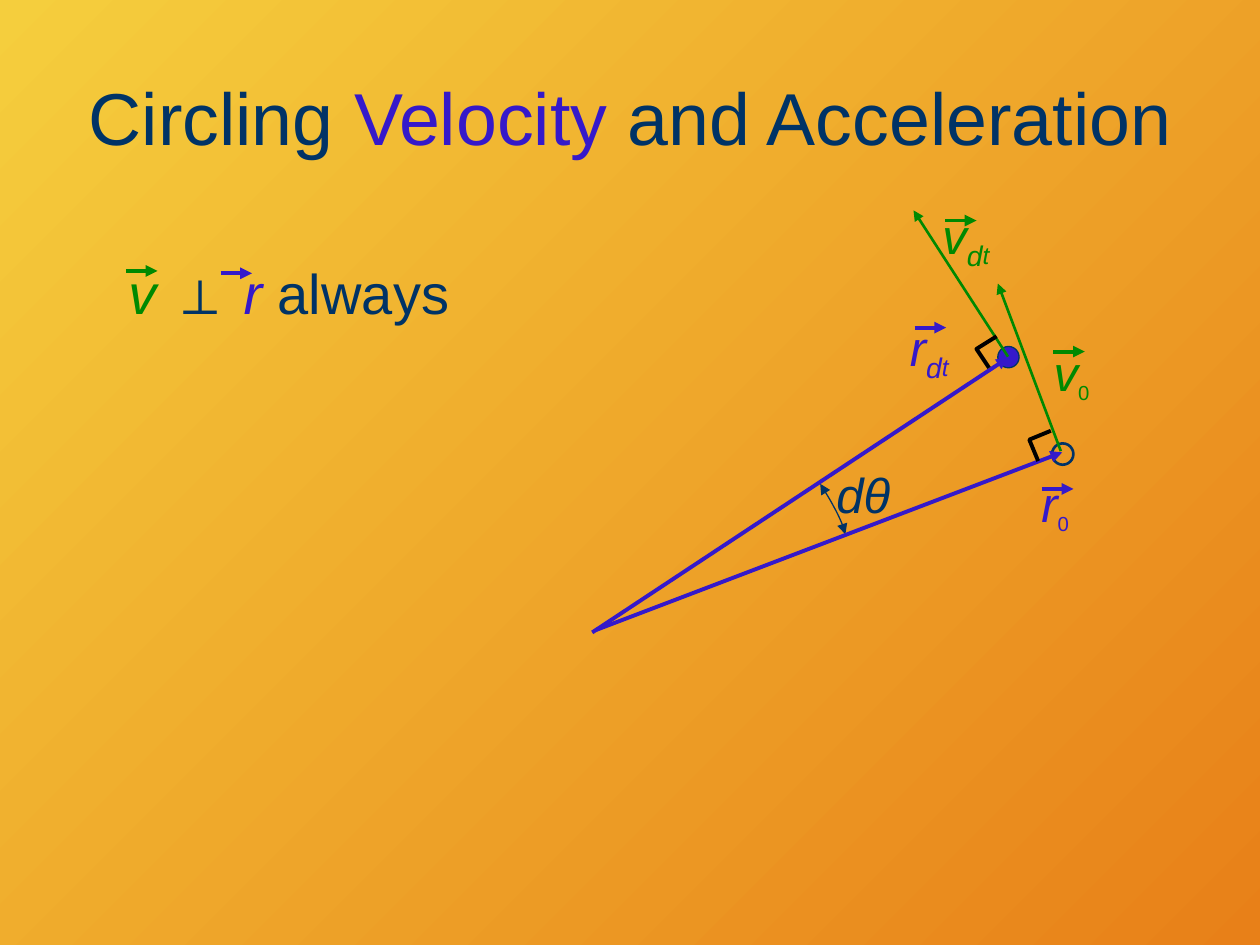
from lxml.etree import SubElement
from pptx import Presentation
from pptx.dml.color import RGBColor
from pptx.enum.shapes import MSO_CONNECTOR as CONN, MSO_SHAPE as SHAPE
from pptx.enum.text import MSO_ANCHOR as ANCHOR, MSO_AUTO_SIZE as AUTO, PP_ALIGN as ALIGN
from pptx.oxml.ns import qn
from pptx.util import Pt

NAVY, BLUE, GREEN, BLACK = "003366", "3519CA", "008901", "000000"
GRADIENT = ["F5CE3D", "E88018"]

# Runs: text, colour, size, italic, subscript
TITLE = [("Circling ", NAVY, 42, False, False), ("Velocity", BLUE, 42, False, False),
         (" and Acceleration", NAVY, 42, False, False)]
BODY = [("v ", GREEN, 32, True, False), ("⊥ ", NAVY, 32, False, False),
        ("r", BLUE, 32, True, False), (" always", NAVY, 32, False, False)]
ANGLE = [("dθ", NAVY, 28, True, False)]

# Vector labels: letter, subscript, colour, left, top
LABELS = [("r", "0", BLUE, 578.9, 267.1), ("r", "dt", BLUE, 506.9, 177.8),
          ("v", "dt", GREEN, 527.8, 113.8), ("v", "0", GREEN, 588.2, 192.2)]
LABEL_SIZE = (48.2, 41)

# Short bars over the vector letters: colour, left, y
BARS = [(BLUE, 595.4, 279.4), (BLUE, 522.7, 187.2), (GREEN, 540, 126),
        (GREEN, 601.9, 200.9), (BLUE, 126, 156.2), (GREEN, 72, 154.8)]
BAR_LENGTH = 18

# Vectors: colour, line width, start, end
VECTORS = [(BLUE, 2.25, (340.6, 360), (607, 258.5)), (BLUE, 2.25, (338.4, 361.4), (576, 204.5)),
           (GREEN, 1.5, (576, 203.8), (522, 120.2)), (GREEN, 1.5, (606.2, 257.8), (570.2, 162))]

# Particles: left, top, fill, line width
PARTICLES = [(601.2, 253.4, None, 1.5), (570.2, 198, BLUE, 0.75)]
DIAMETER = 12.2

RIGHT_ANGLES = [[(565.2, 210.2), (558, 199.4), (569.5, 192.2)],
                [(593.3, 263.5), (588.2, 251.3), (600.5, 246.2)]]
ARC = [(483.1, 305.3), (481, 295.9), (472.3, 282.2), (468.7, 276.5)]
ARC_STEPS = 16


def rgb(color):
    return RGBColor.from_string(color)


def write(tf, runs, align):
    tf.word_wrap = True
    p = tf.paragraphs[0]
    p.alignment = align
    for text, color, size, italic, sub in runs:
        r = p.add_run()
        r.text = text
        r.font.name, r.font.size, r.font.italic = "Arial", Pt(size), italic
        r.font.color.rgb = rgb(color)
        if sub:
            r.font._element.set("baseline", "-25000")
    return p


def place(sp, left, top, width, height):
    sp.left, sp.top, sp.width, sp.height = Pt(left), Pt(top), Pt(width), Pt(height)


def add_label(s, left, top, runs, align):
    tf = s.shapes.add_textbox(Pt(left), Pt(top), *map(Pt, LABEL_SIZE)).text_frame
    tf.auto_size = AUTO.SHAPE_TO_FIT_TEXT
    write(tf, runs, align)


def style_line(sp, color, width, ends=()):
    """Colour the line and put triangles on the named ends."""
    sp.line.color.rgb = rgb(color)
    sp.line.width = Pt(width)
    for end in ends:
        SubElement(sp.line._get_or_add_ln(), qn("a:" + end), type="triangle")


def add_arrow(s, color, width, start, end):
    line = s.shapes.add_connector(CONN.STRAIGHT, *map(Pt, start + end))
    style_line(line, color, width, ["tailEnd"])
    SubElement(line._element.spPr, qn("a:effectLst"))


def add_polyline(s, points, color, width, ends=()):
    start, *rest = [(Pt(x), Pt(y)) for x, y in points]
    builder = s.shapes.build_freeform(*start)
    builder.add_line_segments(rest, close=False)
    sp = builder.convert_to_shape()
    sp.fill.background()
    sp.shadow.inherit = False
    style_line(sp, color, width, ends)


def bezier(points, t):
    weights = [(1 - t) ** 3, 3 * t * (1 - t) ** 2, 3 * t * t * (1 - t), t ** 3]
    return tuple(sum(w * c for w, c in zip(weights, axis)) for axis in zip(*points))


def main():
    prs = Presentation()
    prs.slide_width, prs.slide_height = Pt(720), Pt(540)
    s = prs.slides.add_slide(prs.slide_layouts[1])

    fill = s.background.fill
    fill.gradient()
    fill.gradient_angle = 315
    for stop, color, position in zip(fill.gradient_stops, GRADIENT, (0, 1)):
        stop.color.rgb = rgb(color)
        stop.position = position

    title, body = s.placeholders
    place(title, 36, 21.6, 648, 90)
    title.text_frame.auto_size = AUTO.NONE
    title.text_frame.vertical_anchor = ANCHOR.MIDDLE
    write(title.text_frame, TITLE, ALIGN.CENTER)

    place(body, 66.2, 144, 198, 48.2)
    body.text_frame.auto_size = AUTO.NONE
    pPr = write(body.text_frame, BODY, ALIGN.LEFT)._p.get_or_add_pPr()
    pPr.set("marL", str(Pt(27)))
    pPr.set("indent", str(Pt(-27)))
    SubElement(pPr, qn("a:buNone"))

    arc = [bezier(ARC, i / ARC_STEPS) for i in range(ARC_STEPS + 1)]
    add_polyline(s, arc, NAVY, 0.75, ["headEnd", "tailEnd"])
    add_label(s, 470.9, 262.1, ANGLE, ALIGN.LEFT)

    for left, top, color, width in PARTICLES:
        sp = s.shapes.add_shape(SHAPE.OVAL, Pt(left), Pt(top), Pt(DIAMETER), Pt(DIAMETER))
        sp.shadow.inherit = False
        if color:
            sp.fill.solid()
            sp.fill.fore_color.rgb = rgb(color)
        else:
            sp.fill.background()
        style_line(sp, NAVY, width)

    for letter, sub, color, left, top in LABELS:
        sizes = {"0": 20, "d": 28, "t": 24}
        runs = [(letter, color, 28, True, False)]
        runs += [(c, color, sizes[c], c != "0", True) for c in sub]
        add_label(s, left, top, runs, ALIGN.CENTER)
    for color, left, y in BARS:
        add_arrow(s, color, 2.25, (left, y), (left + BAR_LENGTH, y))
    for vector in VECTORS:
        add_arrow(s, *vector)
    for corner in RIGHT_ANGLES:
        add_polyline(s, corner, BLACK, 2.25)

    prs.save("out.pptx")


if __name__ == "__main__":
    main()
